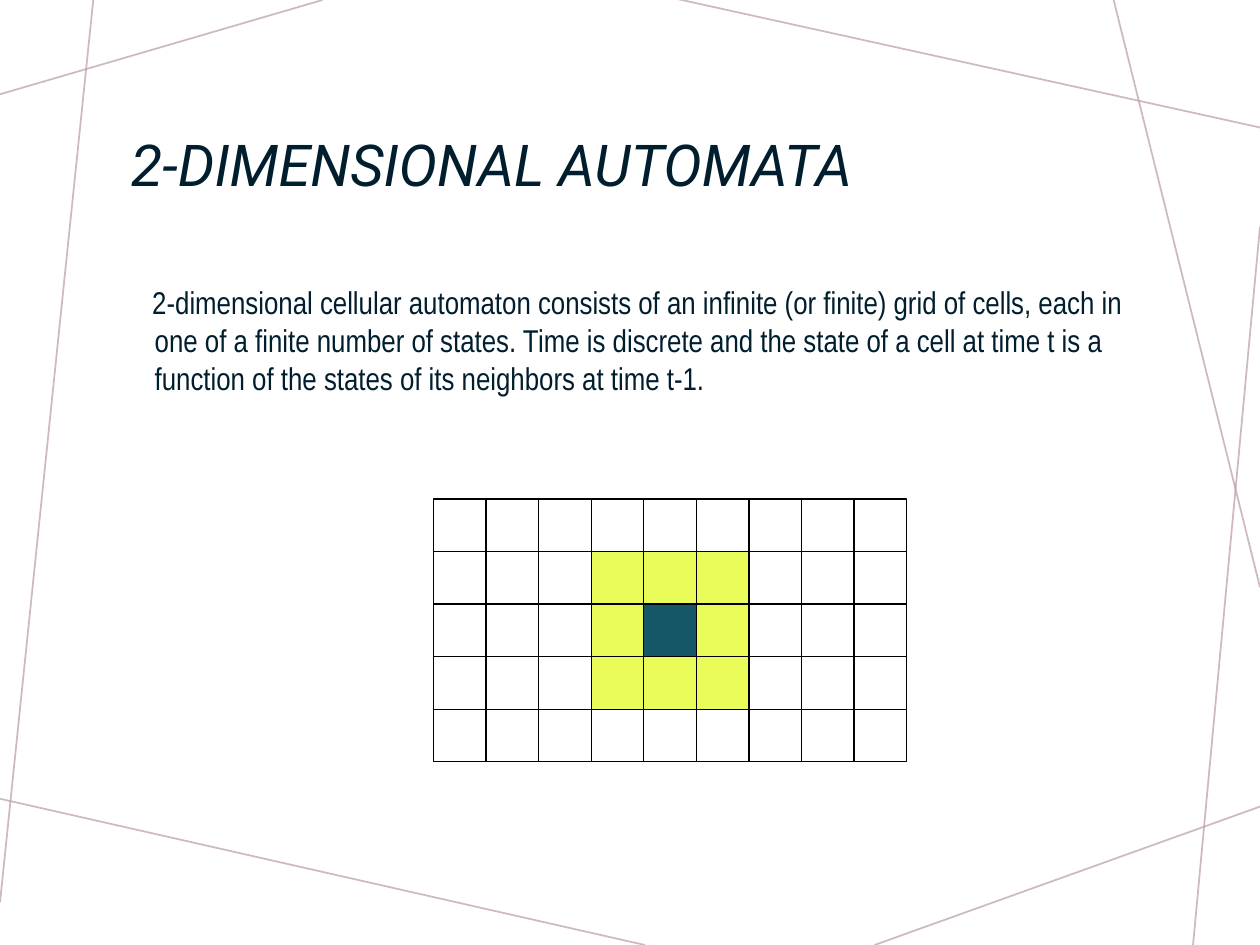
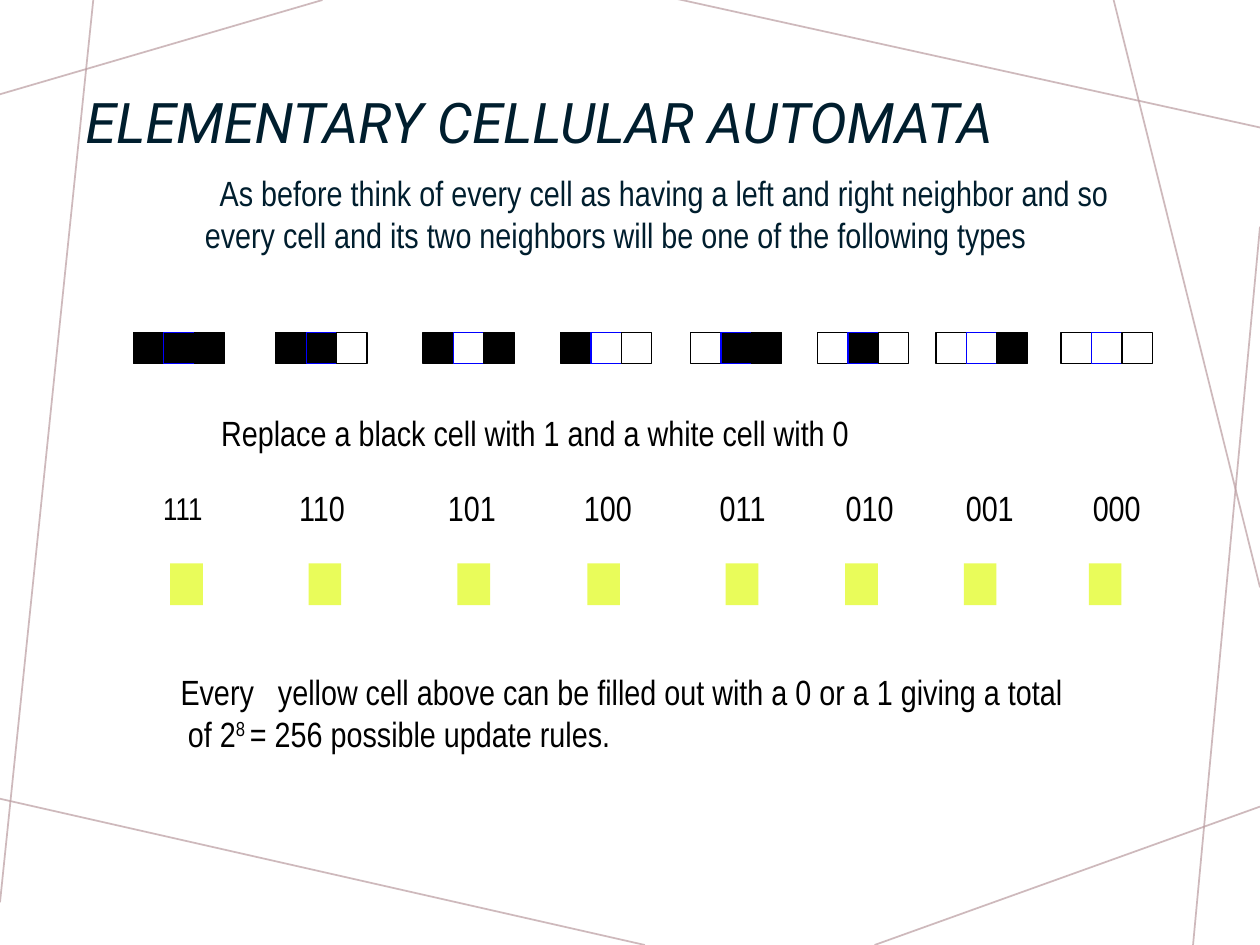
from lxml.etree import SubElement
from pptx import Presentation
from pptx.dml.color import RGBColor
from pptx.enum.shapes import MSO_CONNECTOR, MSO_SHAPE
from pptx.enum.text import MSO_ANCHOR
from pptx.oxml.ns import qn
from pptx.util import Cm, Pt

NAVY = RGBColor(0x00, 0x1E, 0x2E)
TEAL = RGBColor(0x15, 0x57, 0x67)
YELLOW = RGBColor(0xE9, 0xFC, 0x5A)
MAUVE = RGBColor(0xBA, 0x9C, 0xA0)
BLACK = RGBColor(0x00, 0x00, 0x00)
WHITE = RGBColor(0xFF, 0xFF, 0xFF)
BLUE = RGBColor(0x00, 0x00, 0xFF)

TITLE_FONT = "Roboto"
BODY_FONT = "Arial Narrow"
TEXT_INSET = 0.25

# Start and end of each background line, in centimetres
BACKGROUND_LINES = [
    (6.5, 0, 0, 1.9),
    (1.88, 0, 0, 18.19),
    (13, 19.05, -0.1, 16.08),
    (25.4, 16.26, 17.63, 19.05),
    (25.4, 4.57, 24.05, 19.05),
    (25.4, 11.84, 22.45, 0),
    (25.4, 2.57, 13.61, -0.03),
]

# Neighborhood code, then the left edges of its cells, its label and its result
NEIGHBORHOODS = [
    ("111", 2.69, 3.29, 3.43),
    ("110", 5.56, 6.03, 6.22),
    ("101", 8.53, 9.03, 9.22),
    ("100", 11.3, 11.77, 11.84),
    ("011", 13.92, 14.51, 14.63),
    ("010", 16.48, 17.05, 17.04),
    ("001", 18.87, 19.47, 19.43),
    ("000", 21.39, 22.03, 21.95),
]


def add_background_lines(slide):
    for line_ends in BACKGROUND_LINES:
        line = slide.shapes.add_connector(
            MSO_CONNECTOR.STRAIGHT, *(Cm(value) for value in line_ends))
        line.line.color.rgb = MAUVE
        line.line.width = Pt(1)
        properties = line._element.spPr
        color = properties.find(".//" + qn("a:srgbClr"))
        SubElement(color, qn("a:alpha"), val="70000")
        SubElement(properties, qn("a:effectLst"))


def add_text(slide, box, pieces, size, color=BLACK, font=BODY_FONT,
             margin=0, indent=0):
    """Add a one-paragraph text box with one run for each further piece."""
    shape = slide.shapes.add_textbox(*(Cm(value) for value in box))
    text_frame = shape.text_frame
    text_frame.word_wrap = True
    text_frame.margin_left = Cm(TEXT_INSET)
    paragraph = text_frame.paragraphs[0]
    paragraph.text = pieces[0]
    for piece in pieces[1:]:
        paragraph.add_run().text = piece
    properties = paragraph._p.get_or_add_pPr()
    properties.set("marL", str(Cm(margin)))
    properties.set("indent", str(Cm(indent)))
    for run in paragraph.runs:
        run.font.name = font
        run.font.size = Pt(size)
        run.font.color.rgb = color
    return shape


def add_title(slide, box, title, size):
    shape = add_text(slide, box, [title], size, NAVY, TITLE_FONT)
    shape.text_frame.vertical_anchor = MSO_ANCHOR.MIDDLE
    paragraph = shape.text_frame.paragraphs[0]
    paragraph.line_spacing = 0.9
    paragraph.runs[0].font.italic = True


def add_cell(slide, left, top, width, height, fill=None, outline=None):
    cell = slide.shapes.add_shape(
        MSO_SHAPE.RECTANGLE, Cm(left), Cm(top), Cm(width), Cm(height))
    cell.shadow.inherit = False
    if fill is None:
        cell.fill.background()
    else:
        cell.fill.solid()
        cell.fill.fore_color.rgb = fill
    if outline is None:
        cell.line.fill.background()
    else:
        cell.line.color.rgb = outline
        cell.line.width = Pt(0.75)


def add_automaton_grid(slide, box, columns=9, rows=5):
    """Draw the grid with its middle cell and that cell's neighbors colored."""
    left, top, width, height = box
    cell_width, cell_height = width / columns, height / rows
    for row in range(rows):
        for column in range(columns):
            distance = max(abs(row - rows // 2), abs(column - columns // 2))
            fill = {0: TEAL, 1: YELLOW}.get(distance)
            add_cell(slide, left + column * cell_width, top + row * cell_height,
                     cell_width, cell_height, fill, BLACK)


def add_neighborhood(slide, box, code):
    left, top, width, height = box
    cell_width = width / len(code)
    for index, state in enumerate(code):
        add_cell(slide, left + index * cell_width, top, cell_width, height,
                 BLACK if state == "1" else WHITE,
                 BLUE if index == 1 else BLACK)


def add_rule_count(slide, box):
    shape = add_text(
        slide, box,
        ["Every", " ",
         "yellow cell above can be filled out with a 0 or a 1 giving a total",
         "of 2", "8 ", "= 256 possible update rules."],
        20, margin=0.97, indent=-0.15)
    _, wide_space, first_line, _, exponent, _ = (
        shape.text_frame.paragraphs[0].runs)
    wide_space._r.get_or_add_rPr().set("spc", "910")
    first_line._r.addnext(first_line._r.makeelement(qn("a:br")))
    exponent._r.get_or_add_rPr().set("baseline", "30000")


def build_two_dimensional_slide(slide):
    add_title(slide, (2.39, 1.47, 20.62, 3.84), "2-DIMENSIONAL AUTOMATA", 33)
    add_text(
        slide, (2.39, 5.59, 20.62, 11.18),
        ["2-dimensional cellular automaton consists of an infinite (or finite) "
         "grid of cells, each in one of a finite number of states. Time is "
         "discrete and the state of a cell at time t is a function of the "
         "states of its neighbors at time t-1."],
        18, NAVY, margin=0.48, indent=-0.05)
    add_automaton_grid(slide, (8.74, 10.06, 9.54, 5.3))


def build_elementary_slide(slide):
    add_title(slide, (1.47, 1.73, 23.14, 1.6), "ELEMENTARY CELLULAR AUTOMATA", 32)
    add_text(
        slide, (3.4, 3.33, 20.52, 2.97),
        ["As before think of every cell as having a left and right neighbor "
         "and so every cell and its two neighbors will be one of the "
         "following types"],
        20, NAVY, margin=0.48, indent=0.3)
    add_text(slide, (3.4, 8.18, 20.52, 1.27),
             ["Replace a black cell with 1 and a white cell with 0"],
             20, margin=0.81)
    for code, cells_left, label_left, result_left in NEIGHBORHOODS:
        add_neighborhood(slide, (cells_left, 6.7, 1.84, 0.63), code)
        is_first = code == "111"
        add_text(slide,
                 (label_left - TEXT_INSET, 9.74 if is_first else 9.68, 2, 1.27),
                 [code], 18 if is_first else 20)
        add_cell(slide, result_left, 11.36, 0.66, 0.84, YELLOW)
    add_rule_count(slide, (2.57, 13.39, 20.52, 2.34))


def main():
    presentation = Presentation()
    presentation.slide_width = Cm(25.4)
    presentation.slide_height = Cm(19.05)
    for build_slide in (build_two_dimensional_slide, build_elementary_slide):
        slide = presentation.slides.add_slide(presentation.slide_layouts[6])
        add_background_lines(slide)
        build_slide(slide)
    presentation.save("out.pptx")


if __name__ == "__main__":
    main()
